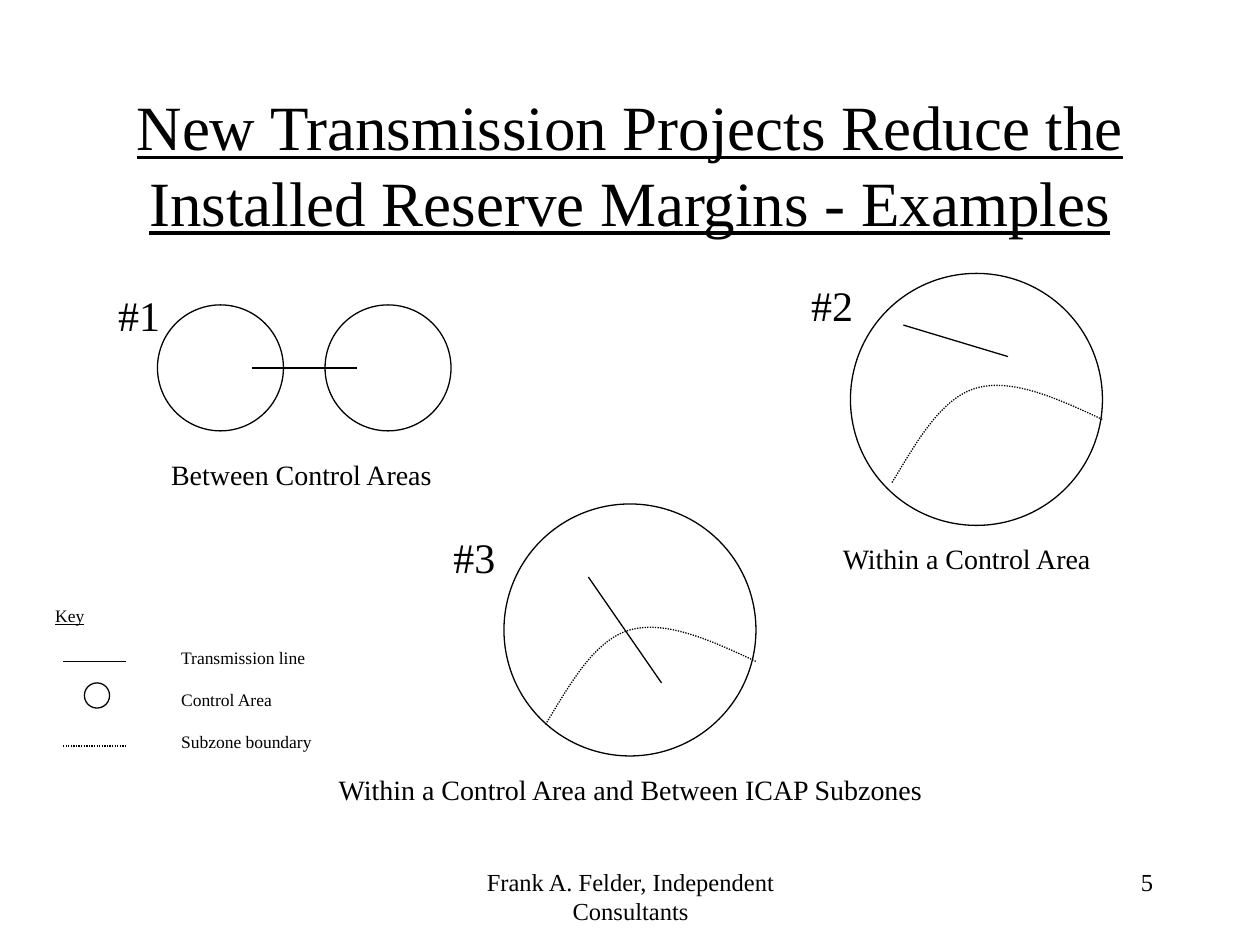
from lxml.etree import SubElement
from pptx import Presentation
from pptx.dml.color import RGBColor
from pptx.enum.dml import MSO_LINE
from pptx.enum.shapes import MSO_CONNECTOR, MSO_SHAPE
from pptx.enum.text import MSO_ANCHOR, MSO_AUTO_SIZE, PP_ALIGN
from pptx.oxml.ns import qn
from pptx.util import Inches, Pt

BLACK = RGBColor(0x00, 0x00, 0x00)
FONT = "Times New Roman"

prs = Presentation()
prs.slide_width, prs.slide_height = Inches(10), Inches(7.5)
slide = prs.slides.add_slide(prs.slide_layouts[6])
shapes = slide.shapes


def add_text(lines, left, top, width, height, size, align=PP_ALIGN.LEFT,
             wrap=False, underline_first=False, gap=0, tab=None):
    box = shapes.add_textbox(Inches(left), Inches(top), Inches(width), Inches(height))
    frame = box.text_frame
    frame.word_wrap = wrap
    frame.auto_size = MSO_AUTO_SIZE.NONE if wrap else MSO_AUTO_SIZE.SHAPE_TO_FIT_TEXT
    for i, line in enumerate(lines):
        paragraph = frame.paragraphs[0] if i == 0 else frame.add_paragraph()
        paragraph.alignment = align
        if i:
            paragraph.space_before = Pt(gap)
        if tab:
            stops = SubElement(paragraph._p.get_or_add_pPr(), qn("a:tabLst"))
            SubElement(stops, qn("a:tab"), pos=str(Inches(tab)), algn="l")
        run = paragraph.add_run()
        run.text = line
        run.font.name, run.font.size = FONT, Pt(size)
        run.font.color.rgb = BLACK
        if i == 0 and underline_first:
            run.font.underline = True
    return frame


def set_outline(shape, dotted=False):
    shape.line.color.rgb = BLACK
    shape.line.width = Pt(0.75)
    if dotted:
        shape.line.dash_style = MSO_LINE.ROUND_DOT


# Title
title = add_text(["New Transmission Projects Reduce the Installed Reserve Margins - Examples"],
                 0.75, 0.67, 8.5, 1.25, 36, PP_ALIGN.CENTER, wrap=True, underline_first=True)
title.vertical_anchor = MSO_ANCHOR.MIDDLE

# Control areas: left, top, diameter (the last one belongs to the key)
for left, top, diameter in [(1.25, 2.42, 1), (2.58, 2.42, 1), (6.75, 2.17, 2),
                            (4, 4, 2), (0.67, 5.42, 0.2)]:
    area = shapes.add_shape(MSO_SHAPE.OVAL, Inches(left), Inches(top),
                            Inches(diameter), Inches(diameter))
    area.shadow.inherit = False
    area.fill.background()
    set_outline(area)

# Transmission lines, and the two line samples of the key
for x1, y1, x2, y2, dotted in [(2, 2.92, 2.83, 2.92, False), (7.17, 2.58, 8, 2.83, False),
                               (4.67, 4.58, 5.25, 5.42, False),
                               (0.5, 5.25, 1, 5.25, False), (0.5, 5.92, 1, 5.92, True)]:
    line = shapes.add_connector(MSO_CONNECTOR.STRAIGHT, Inches(x1), Inches(y1),
                                Inches(x2), Inches(y2))
    set_outline(line, dotted)
    SubElement(line._element.spPr, qn("a:effectLst"))

# Subzone boundaries: two Bezier segments, offsets from the top left corner
CURVE = [(0, 0.83), (0.2, 0.5), (0.39, 0.16), (0.67, 0.08),
         (0.95, 0), (1.31, 0.16), (1.67, 0.33)]
for left, top in [(4.33, 4.92), (7.08, 3)]:
    points = [(Inches(left + dx), Inches(top + dy)) for dx, dy in CURVE]
    builder = shapes.build_freeform(*points[0])
    builder.add_line_segments(points[1:], close=False)
    boundary = builder.convert_to_shape()
    boundary.shadow.inherit = False
    boundary.fill.background()
    set_outline(boundary, dotted=True)
    # Every three line points become one cubic segment
    path = boundary._element.find(".//" + qn("a:path"))
    segments = path.findall(qn("a:lnTo"))
    for start in range(0, len(segments), 3):
        cubic = SubElement(path, qn("a:cubicBezTo"))
        for segment in segments[start:start + 3]:
            cubic.append(segment[0])
            path.remove(segment)

# Example numbers
for number, left, top in [("#1", 0.84, 2.25), ("#2", 6.34, 2.17), ("#3", 3.5, 4.17)]:
    add_text([number], left, top, 0.53, 0.5, 24)

# Captions
for caption, left, top, width in [
        ("Between Control Areas", 1.26, 3.58, 2.28),
        ("Within a Control Area", 6.59, 4.25, 2.19),
        ("Within a Control Area and Between ICAP Subzones", 2.59, 6.08, 4.86)]:
    add_text([caption], left, top, width, 0.37, 16)

# Key
add_text(["Key", "\tTransmission line", "\tControl Area", "\tSubzone boundary"],
         0.34, 4.75, 2.23, 1.27, 10, underline_first=True, gap=12, tab=1)

# Footer and slide number
add_text(["Frank A. Felder, Independent Consultants"], 3.42, 6.83, 3.17, 0.5, 14,
         PP_ALIGN.CENTER, wrap=True)
add_text(["5"], 7.17, 6.83, 2.08, 0.5, 14, PP_ALIGN.RIGHT, wrap=True)

prs.save("out.pptx")
